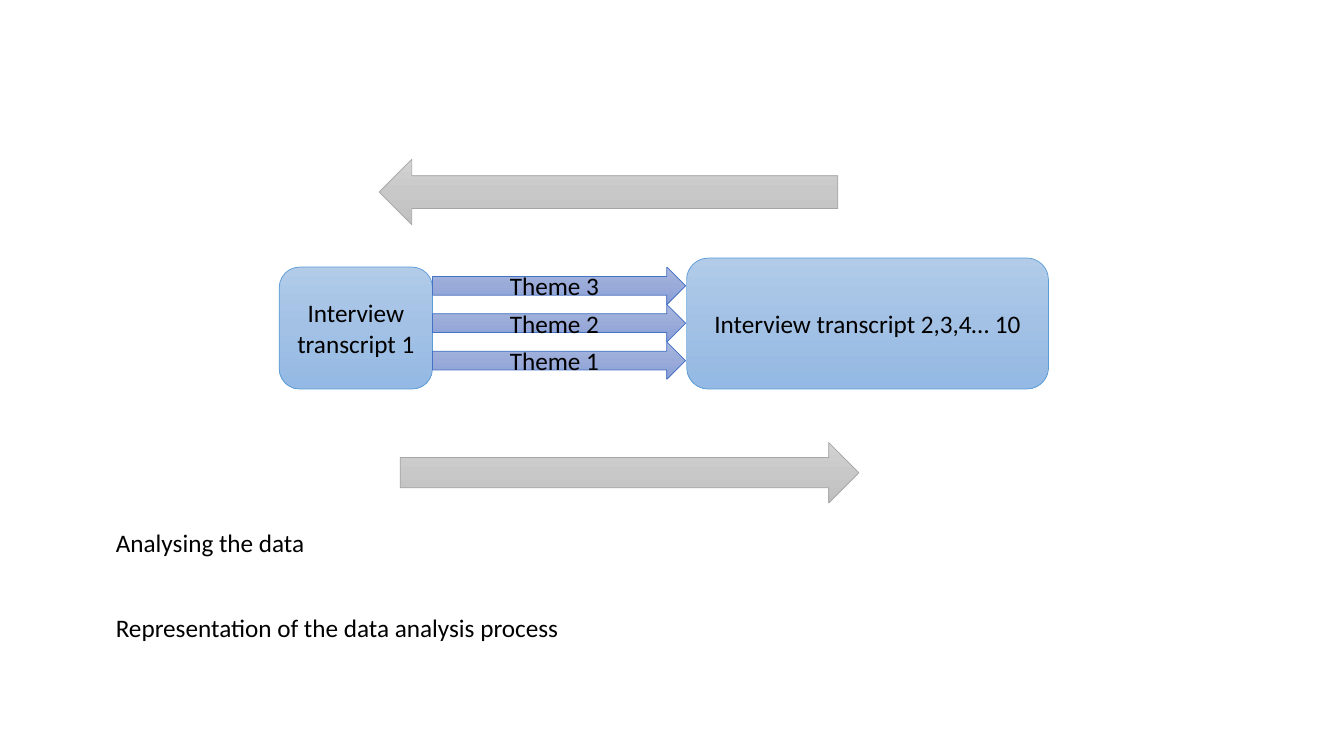
from copy import deepcopy

from pptx import Presentation
from pptx.dml.color import RGBColor
from pptx.enum.shapes import MSO_SHAPE
from pptx.enum.text import MSO_ANCHOR, MSO_AUTO_SIZE, PP_ALIGN
from pptx.oxml.ns import qn
from pptx.util import Inches, Pt

# Each palette: gradient from top to bottom, then outline
BLUE = (("B1CBE9", "A3C1E5", "93B9E4"), "5B9BD5")
INDIGO = (("A8B7DF", "9AABD9", "889ED7"), "4472C4")
GREY = (("D2D2D2", "C8C8C8", "C0C0C0"), "A5A5A5")


def color(hex_code):
    return RGBColor.from_string(hex_code)


class Diagram:
    """Draws on one slide; lengths are percentages of its width and height."""

    font_name = "Calibri"
    font_size = Pt(18)
    text_color = "000000"
    outline_width = Pt(0.5)

    def __init__(self, presentation):
        self.width = presentation.slide_width
        self.height = presentation.slide_height
        self.slide = presentation.slides.add_slide(presentation.slide_layouts[6])

    def place(self, left, top, width, height):
        return (
            int(self.width * left / 100),
            int(self.height * top / 100),
            int(self.width * width / 100),
            int(self.height * height / 100),
        )

    def add_words(self, frame, words, alignment):
        paragraph = frame.paragraphs[0]
        paragraph.alignment = alignment
        run = paragraph.add_run()
        run.text = words
        run.font.name = self.font_name
        run.font.size = self.font_size
        run.font.color.rgb = color(self.text_color)

    def shade(self, shape, shades):
        """Fill with evenly spaced shades running from top to bottom."""
        shape.fill.gradient()
        shape.fill.gradient_angle = 270
        stop_list = shape._element.spPr.find(qn("a:gradFill")).find(qn("a:gsLst"))
        stop_list.insert(1, deepcopy(stop_list[0]))
        for index, (stop, shade) in enumerate(zip(shape.fill.gradient_stops, shades)):
            stop.position = index / (len(shades) - 1)
            stop.color.rgb = color(shade)

    def block(self, preset, box, palette, words=None):
        shades, outline = palette
        shape = self.slide.shapes.add_shape(preset, *self.place(*box))
        shape.shadow.inherit = False
        self.shade(shape, shades)
        shape.line.color.rgb = color(outline)
        shape.line.width = self.outline_width
        if words:
            shape.text_frame.word_wrap = True
            shape.text_frame.vertical_anchor = MSO_ANCHOR.MIDDLE
            self.add_words(shape.text_frame, words, PP_ALIGN.CENTER)

    def caption(self, box, words):
        frame = self.slide.shapes.add_textbox(*self.place(*box)).text_frame
        frame.word_wrap = True
        frame.auto_size = MSO_AUTO_SIZE.SHAPE_TO_FIT_TEXT
        self.add_words(frame, words, PP_ALIGN.LEFT)


def main():
    presentation = Presentation()
    presentation.slide_width = Inches(13.33)
    presentation.slide_height = Inches(7.5)
    diagram = Diagram(presentation)

    diagram.block(MSO_SHAPE.LEFT_ARROW, (28.21, 21.07, 34.13, 8.67), GREY)
    diagram.block(MSO_SHAPE.RIGHT_ARROW, (29.78, 58.53, 34.13, 8), GREY)

    first_left, first_top, first_width = 20.78, 35.33, 11.4
    diagram.block(MSO_SHAPE.ROUNDED_RECTANGLE, (first_left, first_top, first_width, 16.13),
                  BLUE, "Interview transcript 1")
    diagram.block(MSO_SHAPE.ROUNDED_RECTANGLE, (51.09, 34.13, 26.93, 17.33),
                  BLUE, "Interview transcript 2,3,4… 10")

    theme_left = first_left + first_width
    theme_height = 4.95
    for row, theme in enumerate(("Theme 3", "Theme 2", "Theme 1")):
        theme_top = first_top + row * theme_height
        diagram.block(MSO_SHAPE.RIGHT_ARROW, (theme_left, theme_top, 18.83, theme_height),
                      INDIGO, theme)

    diagram.caption((7.88, 69.07, 21.08, 5.33), "Analysing the data")
    diagram.caption((7.88, 80.4, 34.51, 5.33), "Representation of the data analysis process")

    presentation.save("out.pptx")


if __name__ == "__main__":
    main()
